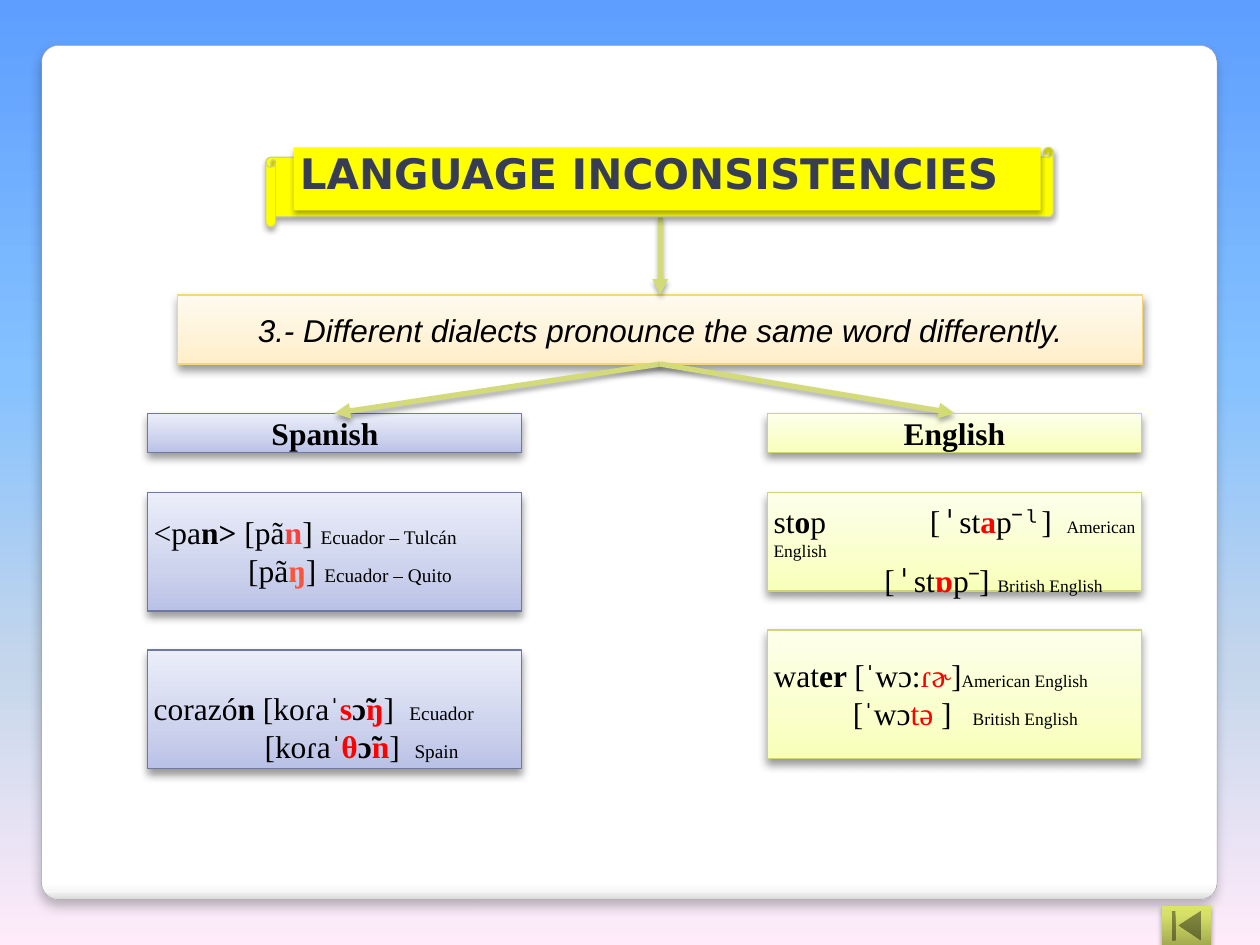
from lxml import etree
from pptx import Presentation
from pptx import util as u
from pptx.dml.color import RGBColor
from pptx.enum import shapes, text
from pptx.oxml.ns import qn

# Colours
BLACK, RED = RGBColor(0, 0, 0), RGBColor(0xFF, 0, 0)
CORAL, ORANGE = RGBColor(0xFF, 0x3F, 0x39), RGBColor(0xFF, 0x53, 0x3D)
YELLOW, NAVY = RGBColor(0xFF, 0xFF, 0), RGBColor(0x37, 0x3D, 0x54)
LIME, OLIVE = RGBColor(0xD2, 0xDA, 0x7A), RGBColor(0xCF, 0xD7, 0x75)
SLATE, GOLD = RGBColor(0x6E, 0x78, 0xA0), RGBColor(0xF7, 0xD7, 0x74)
GREY = RGBColor(0xA2, 0xA1, 0xA1)

# Gradients from top to bottom: (percent, colour)
SKY = [(0, "5E9EFF"), (40, "85C2FF"), (70, "C4D6EB"), (100, "FFEBFA")]
PAPER = [(0, "FFFFFF"), (98, "FFFFFF"), (99, "F7F7F7"), (100, "D9D9D9")]
CREAM = [(0, "FFFAF0"), (65, "FFF3D7"), (100, "FFEEC7")]
BLUE = [(0, "EBEEF9"), (65, "CDD3ED"), (100, "B9C1E6")]
LEMON = [(0, "FDFFEB"), (65, "FAFFCC"), (100, "F8FFB8")]
MOSS = [(0, "DAE466"), (20, "D7E168"), (100, "A3AB4F")]

# Shadows: opacity percent, blur and distance in points
PAPER_SHADOW, CARD_SHADOW, SOFT_SHADOW = (25, 6, 4), (40, 5, 3), (35, 3, 1.8)

# Span styles
SERIF = dict(name="Times New Roman", size=u.Pt(18), color=BLACK)
BOLD = SERIF | dict(bold=True)
RED_BOLD = BOLD | dict(color=RED)
RED_PLAIN = SERIF | dict(color=RED)
MONO = SERIF | dict(name="DejaVu Sans Mono")
NOTE = SERIF | dict(size=u.Pt(11))
SMALL = SERIF | dict(size=u.Pt(10))
RULE = dict(name="Arial", size=u.Pt(18), color=BLACK, italic=True)
HEADING = dict(name="DejaVu Sans", size=u.Pt(24), color=NAVY, bold=True)

# Content: a line is (tab stops, spans)
TITLE = [([], [("LANGUAGE INCONSISTENCIES", HEADING)])]
STATEMENT = [([], [("3.- Different dialects pronounce the same word differently.", RULE)])]
PAN = [
    ([], [("<pa", SERIF), ("n>", BOLD), (" [pã", SERIF), ("n", BOLD | dict(color=CORAL)),
          ("] ", SERIF), ("Ecuador – Tulcán", NOTE)]),
    ([0.75], [("\t[pã", SERIF), ("ŋ", BOLD | dict(color=ORANGE)), ("] ", SERIF),
              ("Ecuador – Quito", NOTE)]),
]
CORAZON = [
    ([2.03], [("corazó", SERIF), ("n", BOLD), (" [koɾa", SERIF), ("ˈ", BOLD), ("s", RED_BOLD),
              ("ɔ̃", BOLD), ("ŋ", RED_BOLD), ("]\t", SERIF), ("Ecuador", NOTE)]),
    ([0.88, 2.07], [("\t[koɾa", SERIF), ("ˈ", BOLD), ("θ", RED_BOLD), ("ɔ̃", BOLD),
                    ("n", RED_BOLD), ("]\t", SERIF), ("Spain", NOTE)]),
]
STOP = [
    ([1.24], [("st", SERIF), ("o", BOLD), ("p\t[", SERIF), ("ˈ", MONO), ("st", SERIF),
              ("a", RED_BOLD), ("pˉ", SERIF), ("ˡ", MONO), ("] ", SERIF),
              ("American English", SMALL)]),
    ([0.88], [("\t[", SERIF), ("ˈ", MONO), ("st", SERIF), ("ɒ", RED_BOLD), ("pˉ] ", SERIF),
              ("British English", SMALL)]),
]
WATER = [
    ([], [("wat", SERIF), ("er ", BOLD), ("[ˈwɔ:", SERIF), ("ɾɚ", RED_PLAIN), ("]", SERIF),
          ("American English", SMALL)]),
    ([0.63, 1.58], [("\t[ˈwɔ", SERIF), ("tə", RED_PLAIN), (" ]\t", SERIF),
                    ("British English", SMALL)]),
]

# Columns: left, heading, gradient, edge, cards of (top, height, middle of text, lines)
COLUMNS = [
    (1.17, "Spanish\t", BLUE, SLATE, [(3.91, 0.94, 4.37, PAN), (5.16, 0.94, 5.77, CORAZON)]),
    (6.09, "English", LEMON, OLIVE, [(3.91, 0.78, 4.37, STOP), (5, 1.02, 5.51, WATER)]),
]
COLUMN_WIDTH, HEADER_TOP, HEADER_HEIGHT = 2.97, 3.28, 0.31
CENTRE = 5.24

deck = Presentation()
deck.slide_width, deck.slide_height = u.Inches(10), u.Inches(7.5)
page = deck.slides.add_slide(deck.slide_layouts[6])


def paint(fill, element, stops):
    fill.gradient()
    fill.gradient_angle = 270
    stop_list = next(element.iter(qn("a:gsLst")))
    for old in list(stop_list):
        stop_list.remove(old)
    for percent, colour in stops:
        stop = etree.SubElement(stop_list, qn("a:gs"), pos=str(percent * 1000))
        etree.SubElement(stop, qn("a:srgbClr"), val=colour)


def cast_shadow(effects, opacity, blur, distance):
    shadow = etree.SubElement(effects, qn("a:outerShdw"), blurRad=str(u.Pt(blur)),
                              dist=str(u.Pt(distance)), dir="5400000", rotWithShape="0")
    colour = etree.SubElement(shadow, qn("a:srgbClr"), val="000000")
    etree.SubElement(colour, qn("a:alpha"), val=str(opacity * 1000))


def add_panel(kind, area, fill, edge, shadow, width=0.75):
    panel = page.shapes.add_shape(kind, *map(u.Inches, area))
    panel.shadow.inherit = False
    cast_shadow(panel._element.spPr.find(qn("a:effectLst")), *shadow)
    if isinstance(fill, list):
        paint(panel.fill, panel._element.spPr, fill)
    else:
        panel.fill.solid()
        panel.fill.fore_color.rgb = fill
    if edge is None:
        panel.line.fill.background()
    else:
        panel.line.color.rgb, panel.line.width = edge, u.Pt(width)
    return panel


def write(box, lines, align, anchor=text.MSO_ANCHOR.MIDDLE, spacing=None):
    frame = box.text_frame
    margins = {f"margin_{side}": u.Inches(0.05) for side in ("left", "right", "top", "bottom")}
    for key, value in (margins | dict(word_wrap=True, vertical_anchor=anchor)).items():
        setattr(frame, key, value)
    for number, (tabs, spans) in enumerate(lines):
        para = frame.add_paragraph() if number else frame.paragraphs[0]
        para.alignment, para.line_spacing = align, spacing
        if tabs:
            tab_list = etree.SubElement(para._p.get_or_add_pPr(), qn("a:tabLst"))
            for stop in tabs:
                etree.SubElement(tab_list, qn("a:tab"), pos=str(u.Inches(stop)), algn="l")
        for words, style in spans:
            span = para.add_run()
            span.text = words
            for key, value in style.items():
                if key == "color":
                    span.font.color.rgb = value
                else:
                    setattr(span.font, key, value)


def add_text(left, middle, width, height, lines, align):
    area = (left, middle - height / 2, width, height)
    write(page.shapes.add_textbox(*map(u.Inches, area)), lines, align)


def add_arrow(start, end, source, target):
    arrow = page.shapes.add_connector(shapes.MSO_CONNECTOR.STRAIGHT,
                                      *map(u.Inches, start + end))
    if source is not None:
        arrow.begin_connect(source, 2)
    arrow.end_connect(target, 0)
    arrow.line.color.rgb, arrow.line.width = LIME, u.Pt(3)
    etree.SubElement(arrow.line._get_or_add_ln(), qn("a:tailEnd"), type="triangle")
    effects = etree.SubElement(arrow._element.spPr, qn("a:effectLst"))
    cast_shadow(effects, *SOFT_SHADOW)


RECTANGLE = shapes.MSO_SHAPE.RECTANGLE
CENTER, JUSTIFY = text.PP_ALIGN.CENTER, text.PP_ALIGN.JUSTIFY

# Background and paper
paint(page.background.fill, page._element, SKY)
paper = add_panel(shapes.MSO_SHAPE.ROUNDED_RECTANGLE, (0.33, 0.36, 9.33, 6.78),
                  PAPER, GREY, PAPER_SHADOW, 0.25)
paper.adjustments[0] = 0.02

# Statement
statement = add_panel(RECTANGLE, (1.41, 2.34, 7.66, 0.55), CREAM, GOLD, CARD_SHADOW)
add_text(1.41, 2.62, 7.66, 0.38, STATEMENT, CENTER)
add_arrow((CENTRE, 1.72), (CENTRE, 2.34), None, statement)

# Language columns
for left, heading, fill, edge, cards in COLUMNS:
    header = add_panel(RECTANGLE, (left, HEADER_TOP, COLUMN_WIDTH, HEADER_HEIGHT),
                       fill, edge, CARD_SHADOW)
    add_text(left, HEADER_TOP + HEADER_HEIGHT / 2, COLUMN_WIDTH, 0.38,
             [([], [(heading, BOLD)])], CENTER)
    add_arrow((CENTRE, 2.89), (left + COLUMN_WIDTH / 2, HEADER_TOP), statement, header)
    for top, height, middle, lines in cards:
        add_panel(RECTANGLE, (left, top, COLUMN_WIDTH, height), fill, edge, CARD_SHADOW)
        add_text(left, middle, COLUMN_WIDTH, 0.84, lines, JUSTIFY)

# Title scroll
add_panel(shapes.MSO_SHAPE.HORIZONTAL_SCROLL, (2.11, 1.17, 6.25, 0.63),
          YELLOW, OLIVE, SOFT_SHADOW)
title = add_panel(RECTANGLE, (2.33, 1.17, 5.93, 0.5), YELLOW, None, SOFT_SHADOW)
write(title, TITLE, text.PP_ALIGN.LEFT, text.MSO_ANCHOR.TOP, 0.9)

# Return button
add_panel(shapes.MSO_SHAPE.ACTION_BUTTON_BEGINNING, (9.22, 7.19, 0.39, 0.31),
          MOSS, None, SOFT_SHADOW)

deck.save("out.pptx")
